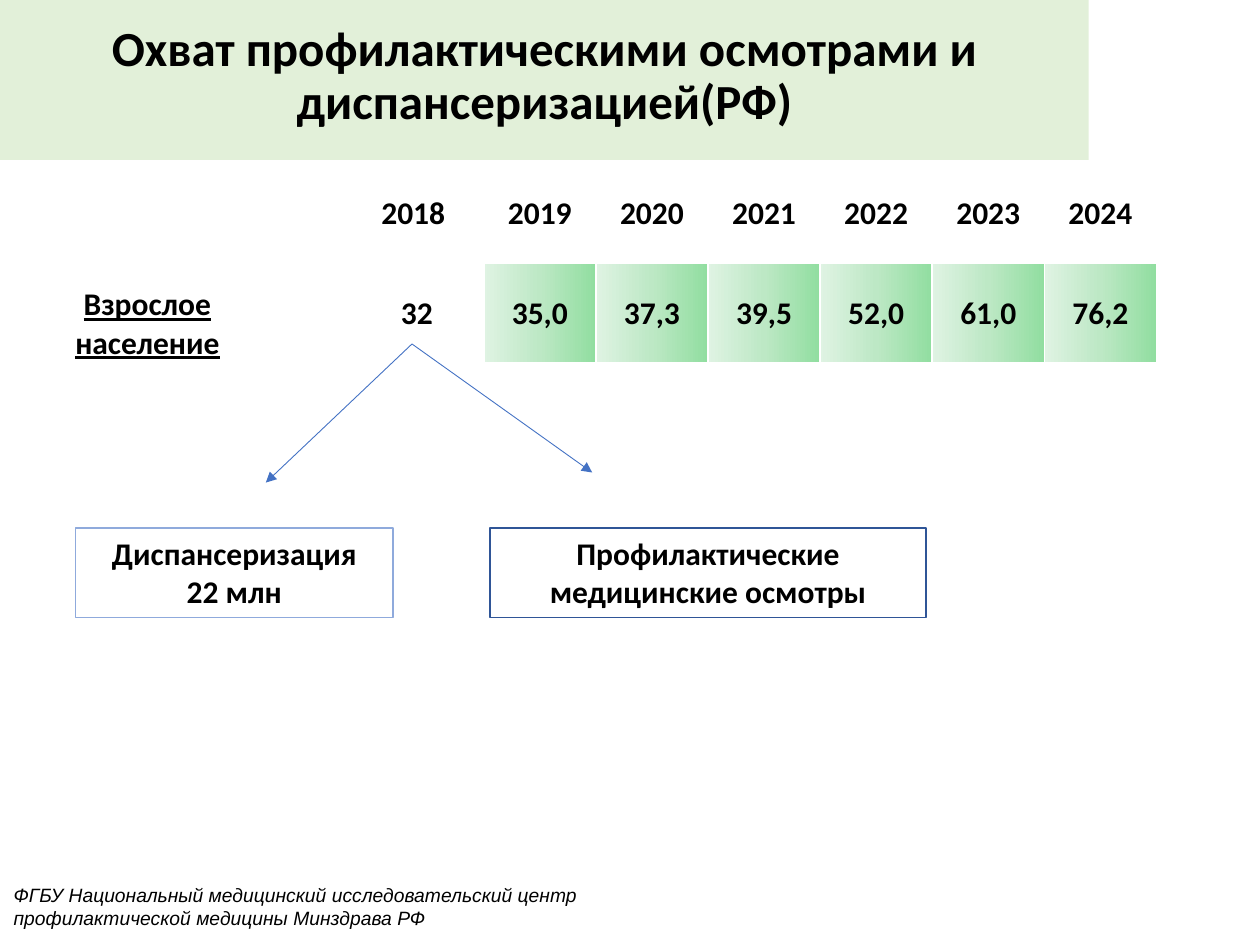
from lxml import etree
from pptx import Presentation
from pptx.dml.color import RGBColor
from pptx.enum.shapes import MSO_CONNECTOR, MSO_SHAPE
from pptx.enum.text import MSO_ANCHOR, MSO_AUTO_SIZE, PP_ALIGN
from pptx.oxml import parse_xml
from pptx.oxml.ns import nsdecls, qn
from pptx.util import Inches, Pt

RECT = MSO_SHAPE.RECTANGLE
STRAIGHT = MSO_CONNECTOR.STRAIGHT
CENTER, LEFT = PP_ALIGN.CENTER, PP_ALIGN.LEFT
TOP, MIDDLE, BOTTOM = MSO_ANCHOR.TOP, MSO_ANCHOR.MIDDLE, MSO_ANCHOR.BOTTOM
GROW, FIXED = MSO_AUTO_SIZE.SHAPE_TO_FIT_TEXT, MSO_AUTO_SIZE.NONE
BODY = {"name": "Calibri", "size": Pt(18), "bold": True}
HEADING = {**BODY, "size": Pt(28)}
LABEL = {**BODY, "underline": True}
SOURCE = {"name": "Arial", "size": Pt(11), "italic": True}
GRADIENT = ((0, "91DEA0"), (50, "BDE8C5"), (100, "DFF3E3"))
YEARS = ("2018", "2019", "2020", "2021", "2022", "2023", "2024")
COVERAGE = (" 32", "35,0", "37,3", "39,5", "52,0", "61,0", "76,2")
COLUMNS = (1.94, 0.58, 1.12) + (0.89,) * 6
ROW_HEIGHT = 0.79
FIRST_YEAR = 2


def color(value):
    """Turn a hex string into a colour."""
    return RGBColor.from_string(value)


def write(frame, lines, font, align=CENTER):
    """Fill a text frame with one formatted paragraph per line."""
    for index, line in enumerate(lines):
        para = frame.paragraphs[0] if index == 0 else frame.add_paragraph()
        para.alignment = align
        span = para.add_run()
        span.text = line
        for name, value in font.items():
            setattr(span.font, name, value)
        span.font.color.rgb = color("000000")


def add_heading(page, text):
    """Place the title on its green band."""
    heading = page.shapes.title
    box = {"left": 0, "top": -0.04, "width": 8.64, "height": 1.31}
    for name, value in box.items():
        setattr(heading, name, Inches(value))
    heading.fill.solid()
    heading.fill.fore_color.rgb = color("E2F0D9")
    frame = heading.text_frame
    frame.vertical_anchor = MIDDLE
    frame.word_wrap = True
    frame.auto_size = FIXED
    write(frame, [text], HEADING)
    frame.paragraphs[0].line_spacing = 0.9
    frame.paragraphs[0].space_before = Pt(10)


def add_source(page, text):
    """Add the institution line at the foot of the slide."""
    box = page.shapes.add_textbox(*map(Inches, (0.01, 6.96, 4.89, 0.47)))
    box.text_frame.word_wrap = True
    box.text_frame.auto_size = GROW
    write(box.text_frame, [text], SOURCE, LEFT)


def add_box(page, left, width, lines, line_color):
    """Add an outlined box with centred text."""
    box = page.shapes.add_shape(RECT, *map(Inches, (left, 4.19, width, 0.71)))
    box.shadow.inherit = False
    box.fill.background()
    box.line.color.rgb = color(line_color)
    box.line.width = Pt(0.75)
    frame = box.text_frame
    frame.word_wrap = True
    frame.vertical_anchor = TOP
    frame.auto_size = GROW
    write(frame, lines, BODY)


def add_arrow(page, start, end):
    """Add a thin blue arrow."""
    arrow = page.shapes.add_connector(STRAIGHT, *map(Inches, start + end))
    arrow.line.color.rgb = color("4472C4")
    arrow.line.width = Pt(0.5)
    etree.SubElement(arrow.line._get_or_add_ln(), qn("a:tailEnd"), type="triangle")
    etree.SubElement(arrow._element.spPr, qn("a:effectLst"))


def format_cell(cell, shaded):
    """Set the margins, white borders and fill of a cell."""
    for side in ("left", "top", "right"):
        setattr(cell, f"margin_{side}", Inches(0.01))
    cell.margin_bottom = 0
    cell.vertical_anchor = MIDDLE
    props = cell._tc.get_or_add_tcPr()
    for side in "LRTB":
        props.append(parse_xml(
            f'<a:ln{side} {nsdecls("a")} w="12700"><a:solidFill>'
            f'<a:srgbClr val="FFFFFF"/></a:solidFill></a:ln{side}>'))
    if shaded:
        stops = "".join(f'<a:gs pos="{share * 1000}"><a:srgbClr val="{value}"/></a:gs>'
                        for share, value in GRADIENT)
        props.append(parse_xml(
            f'<a:gradFill {nsdecls("a")}><a:gsLst>{stops}</a:gsLst>'
            '<a:lin ang="10800000" scaled="0"/></a:gradFill>'))
    else:
        cell.fill.background()


def add_coverage_table(page):
    """Add the table of coverage by year."""
    size = (sum(COLUMNS), 2 * ROW_HEIGHT)
    table = page.shapes.add_table(2, len(COLUMNS), *map(Inches, (0.2, 1.3) + size)).table
    table.first_row = table.horz_banding = False
    for column, width in zip(table.columns, COLUMNS):
        column.width = Inches(width)
    for row, texts in enumerate((YEARS, COVERAGE)):
        table.rows[row].height = Inches(ROW_HEIGHT)
        for column in range(len(COLUMNS)):
            format_cell(table.cell(row, column), row == 1 and column > FIRST_YEAR)
        for column, text in enumerate(texts, FIRST_YEAR):
            write(table.cell(row, column).text_frame, [text], BODY)
    label = table.cell(0, 0)
    label.merge(table.cell(1, 0))
    label.vertical_anchor = BOTTOM
    write(label.text_frame, ["Взрослое население"], LABEL)


def main():
    """Build and save the slide."""
    deck = Presentation()
    deck.slide_width, deck.slide_height = Inches(10), Inches(7.5)
    page = deck.slides.add_slide(deck.slide_layouts[5])
    add_source(page, "ФГБУ Национальный медицинский исследовательский центр "
                     "профилактической медицины Минздрава РФ")
    add_heading(page, "Охват профилактическими осмотрами и диспансеризацией(РФ)")
    add_coverage_table(page)
    for end in ((2.11, 3.83), (4.7, 3.75)):
        add_arrow(page, (3.27, 2.73), end)
    add_box(page, 3.89, 3.46, ["Профилактические медицинские осмотры"], "2F5597")
    add_box(page, 0.6, 2.52, ["Диспансеризация", "22 млн"], "8FAADC")
    deck.save("out.pptx")


if __name__ == "__main__":
    main()
